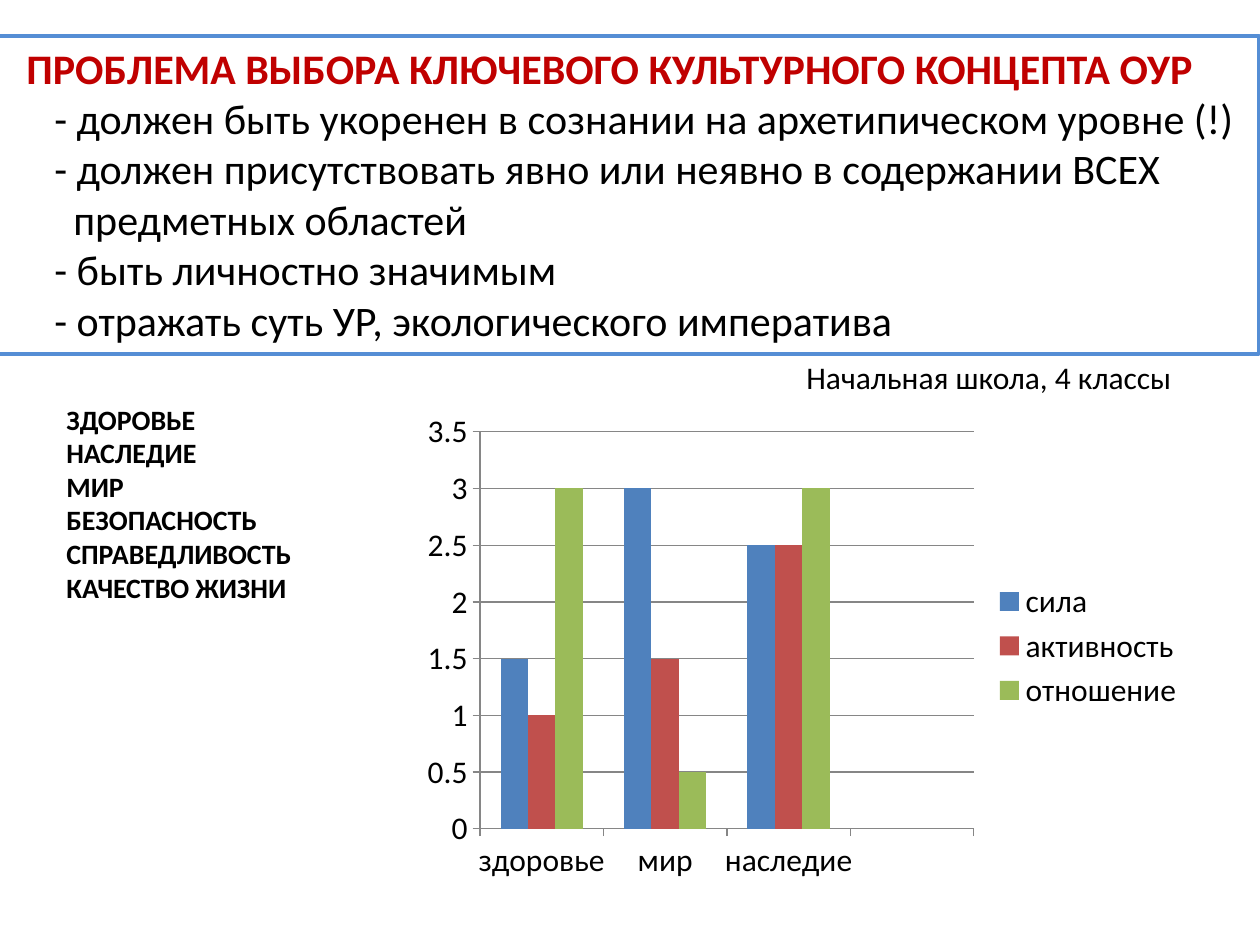
from dataclasses import dataclass

import pptx
import pptx.chart.data
import pptx.dml.color
import pptx.enum.chart
import pptx.enum.text
import pptx.util

RGB = pptx.dml.color.RGBColor
BLACK = RGB(0x00, 0x00, 0x00)
RED = RGB(0xC0, 0x00, 0x00)
FRAME_BLUE = RGB(0x55, 0x8E, 0xD5)
GRID_GRAY = RGB(0x86, 0x86, 0x86)
SCALE = 914400 / 126


@dataclass(frozen=True)
class Box:
    x: int
    y: int
    w: int
    h: int


@dataclass(frozen=True)
class Line:
    text: str
    indent: int = 0
    bold: bool = False
    color: RGB = BLACK


@dataclass(frozen=True)
class Series:
    name: str
    values: tuple
    color: RGB


CRITERIA = [
    Line("ПРОБЛЕМА ВЫБОРА КЛЮЧЕВОГО КУЛЬТУРНОГО КОНЦЕПТА ОУР", 19, True, RED),
    Line("- должен быть укоренен в сознании на архетипическом уровне (!)", 47),
    Line("- должен присутствовать явно или неявно в содержании ВСЕХ", 47),
    Line("предметных областей", 66),
    Line("- быть личностно значимым", 47),
    Line("- отражать суть УР, экологического императива", 47),
]
CONCEPTS = [
    Line(word, bold=True)
    for word in ("ЗДОРОВЬЕ", "НАСЛЕДИЕ", "МИР", "БЕЗОПАСНОСТЬ",
                 "СПРАВЕДЛИВОСТЬ", "КАЧЕСТВО ЖИЗНИ")
]
CATEGORIES = ("здоровье", "мир", "наследие", "")
SERIES = [
    Series("сила", (1.5, 3, 2.5, None), RGB(0x4F, 0x81, 0xBD)),
    Series("активность", (1, 1.5, 2.5, None), RGB(0xC0, 0x50, 0x4D)),
    Series("отношение", (3, 0.5, 3, None), RGB(0x9B, 0xBB, 0x59)),
]


def px(n: int) -> int:
    return pptx.util.Emu(round(n * SCALE))


def place(box: Box) -> tuple:
    return px(box.x), px(box.y), px(box.w), px(box.h)


def assign(target, values: dict) -> None:
    for name, value in values.items():
        setattr(target, name, value)


def set_font(font, size: int, color: RGB = BLACK, bold: bool = False) -> None:
    assign(font, {"name": "Calibri", "size": pptx.util.Pt(size), "bold": bold})
    font.color.rgb = color


def set_line(line, color: RGB, width: float) -> None:
    line.color.rgb = color
    line.width = pptx.util.Pt(width)


def add_text(s, box: Box, lines: list[Line], size: int):
    sp = s.shapes.add_textbox(*place(box))
    tf = sp.text_frame
    assign(tf, {"word_wrap": True,
                "auto_size": pptx.enum.text.MSO_AUTO_SIZE.SHAPE_TO_FIT_TEXT})
    for i, line in enumerate(lines):
        p = tf.add_paragraph() if i else tf.paragraphs[0]
        if line.indent:
            p._p.get_or_add_pPr().set("marL", str(px(line.indent)))
        r = p.add_run()
        r.text = line.text
        set_font(r.font, size, line.color, line.bold)
    return sp


def add_column_chart(s, box: Box) -> None:
    data = pptx.chart.data.CategoryChartData()
    data.categories = CATEGORIES
    for series in SERIES:
        data.add_series(series.name, series.values)
    kind = pptx.enum.chart.XL_CHART_TYPE.COLUMN_CLUSTERED
    chart = s.shapes.add_chart(kind, *place(box), data).chart
    assign(chart, {"has_title": False, "has_legend": True})
    set_font(chart.font, 18)
    assign(chart.legend, {
        "position": pptx.enum.chart.XL_LEGEND_POSITION.RIGHT,
        "include_in_layout": False,
    })
    plot = chart.plots[0]
    assign(plot, {"gap_width": 150, "overlap": 0, "vary_by_categories": False})
    for drawn, series in zip(plot.series, SERIES):
        drawn.invert_if_negative = False
        drawn.format.fill.solid()
        drawn.format.fill.fore_color.rgb = series.color
    for axis in (chart.category_axis, chart.value_axis):
        axis.major_tick_mark = pptx.enum.chart.XL_TICK_MARK.OUTSIDE
        set_line(axis.format.line, GRID_GRAY, 0.75)
    assign(chart.value_axis, {"minimum_scale": 0, "maximum_scale": 3.5,
                              "major_unit": 0.5, "has_major_gridlines": True})
    set_line(chart.value_axis.major_gridlines.format.line, GRID_GRAY, 0.75)


def main() -> None:
    prs = pptx.Presentation()
    assign(prs, {"slide_width": px(1260), "slide_height": px(945)})
    s = prs.slides.add_slide(prs.slide_layouts[6])
    add_text(s, Box(54, 396, 630, 217), CONCEPTS, 16)
    add_column_chart(s, Box(412, 403, 785, 486))
    add_text(s, Box(794, 352, 402, 50), [Line("Начальная школа, 4 классы")], 18)
    frame = add_text(s, Box(-5, 36, 1264, 318), CRITERIA, 24)
    set_line(frame.line, FRAME_BLUE, 2.25)
    prs.save("out.pptx")


if __name__ == "__main__":
    main()
